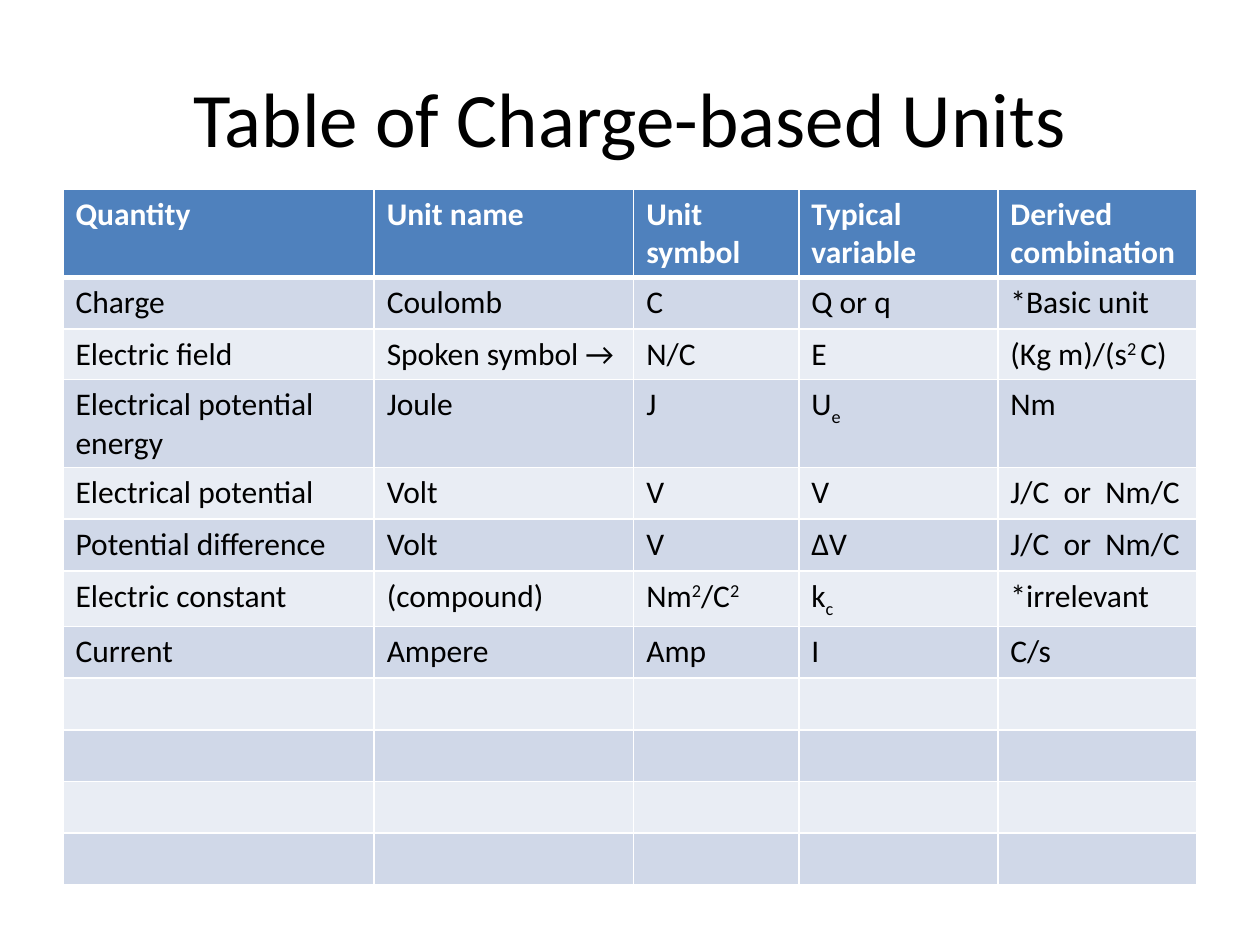
from dataclasses import dataclass

from lxml.etree import SubElement
from pptx import Presentation
from pptx.dml.color import RGBColor
from pptx.enum.text import MSO_ANCHOR, PP_ALIGN
from pptx.oxml.ns import qn
from pptx.util import Inches, Pt


@dataclass(frozen=True)
class Theme:
    font: str = "Calibri"
    title_size: int = 44
    body_size: int = 18
    text: str = "000000"
    white: str = "FFFFFF"
    header: str = "4F81BD"
    bands: tuple = ("D0D8E8", "E9EDF4")
    thin: int = 1
    thick: int = 3


theme = Theme()
baselines = {"^": "30000", "_": "-25000"}


def format_run(run, size, color, bold=False):
    run.font.name = theme.font
    run.font.size = Pt(size)
    run.font.bold = bold
    run.font.color.rgb = RGBColor.from_string(color)


def add_border(cell, side, width):
    line = SubElement(cell._tc.get_or_add_tcPr(), qn(f"a:ln{side}"), w=str(Pt(width)))
    fill = SubElement(line, qn("a:solidFill"))
    SubElement(fill, qn("a:srgbClr"), val=theme.white)


presentation = Presentation()
presentation.slide_width = Inches(10)
presentation.slide_height = Inches(7.5)
slide = presentation.slides.add_slide(presentation.slide_layouts[6])

title = slide.shapes.add_textbox(Inches(0.5), Inches(0.3), Inches(9), Inches(1.25))
title.text_frame.word_wrap = True
title.text_frame.vertical_anchor = MSO_ANCHOR.MIDDLE
title.text_frame.text = "Table of Charge-based Units"
title_paragraph = title.text_frame.paragraphs[0]
title_paragraph.alignment = PP_ALIGN.CENTER
format_run(title_paragraph.runs[0], theme.title_size, theme.text)

column_widths = [2.47, 2.06, 1.31, 1.58, 1.58]
unit_rows = [
    ["Quantity", "Unit name", "Unit symbol", "Typical variable", "Derived combination"],
    ["Charge", "Coulomb", "C", "Q or q", "*Basic unit"],
    ["Electric field", "Spoken symbol →", "N/C", "E", "(Kg m)/(s|^2 |C)"],
    ["Electrical potential energy", "Joule", "J", "U|_e", "Nm"],
    ["Electrical potential", "Volt", "V", "V", "J/C  or  Nm/C"],
    ["Potential difference", "Volt", "V", "ΔV", "J/C  or  Nm/C"],
    ["Electric constant", "(compound)", "Nm|^2|/C|^2", "k|_c", "*irrelevant"],
    ["Current", "Ampere", "Amp", "I", "C/s"],
]
empty_row_count = 4
row_count = len(unit_rows) + empty_row_count
row_height = 0.41
short_rows = {2: 0.36, 3: 0.36}

table = slide.shapes.add_table(
    row_count, len(column_widths), Inches(0.5), Inches(1.5),
    Inches(9), Inches(row_height * row_count),
).table
for column, width in zip(table.columns, column_widths):
    column.width = Inches(width)

for row_index, row in enumerate(table.rows):
    row.height = Inches(short_rows.get(row_index, row_height))
    is_header = row_index == 0
    fill_color = theme.header if is_header else theme.bands[(row_index - 1) % 2]
    text_color = theme.white if is_header else theme.text
    top_width = theme.thick if row_index == 1 else theme.thin
    bottom_width = theme.thick if is_header else theme.thin

    for column_index, cell in enumerate(row.cells):
        add_border(cell, "L", theme.thin)
        add_border(cell, "R", theme.thin)
        add_border(cell, "T", top_width)
        add_border(cell, "B", bottom_width)
        cell.fill.solid()
        cell.fill.fore_color.rgb = RGBColor.from_string(fill_color)
        if row_index >= len(unit_rows):
            continue
        paragraph = cell.text_frame.paragraphs[0]
        for part in unit_rows[row_index][column_index].split("|"):
            run = paragraph.add_run()
            run.text = part.lstrip("^_")
            format_run(run, theme.body_size, text_color, is_header)
            if part[0] in baselines:
                run._r.get_or_add_rPr().set("baseline", baselines[part[0]])

presentation.save("out.pptx")
